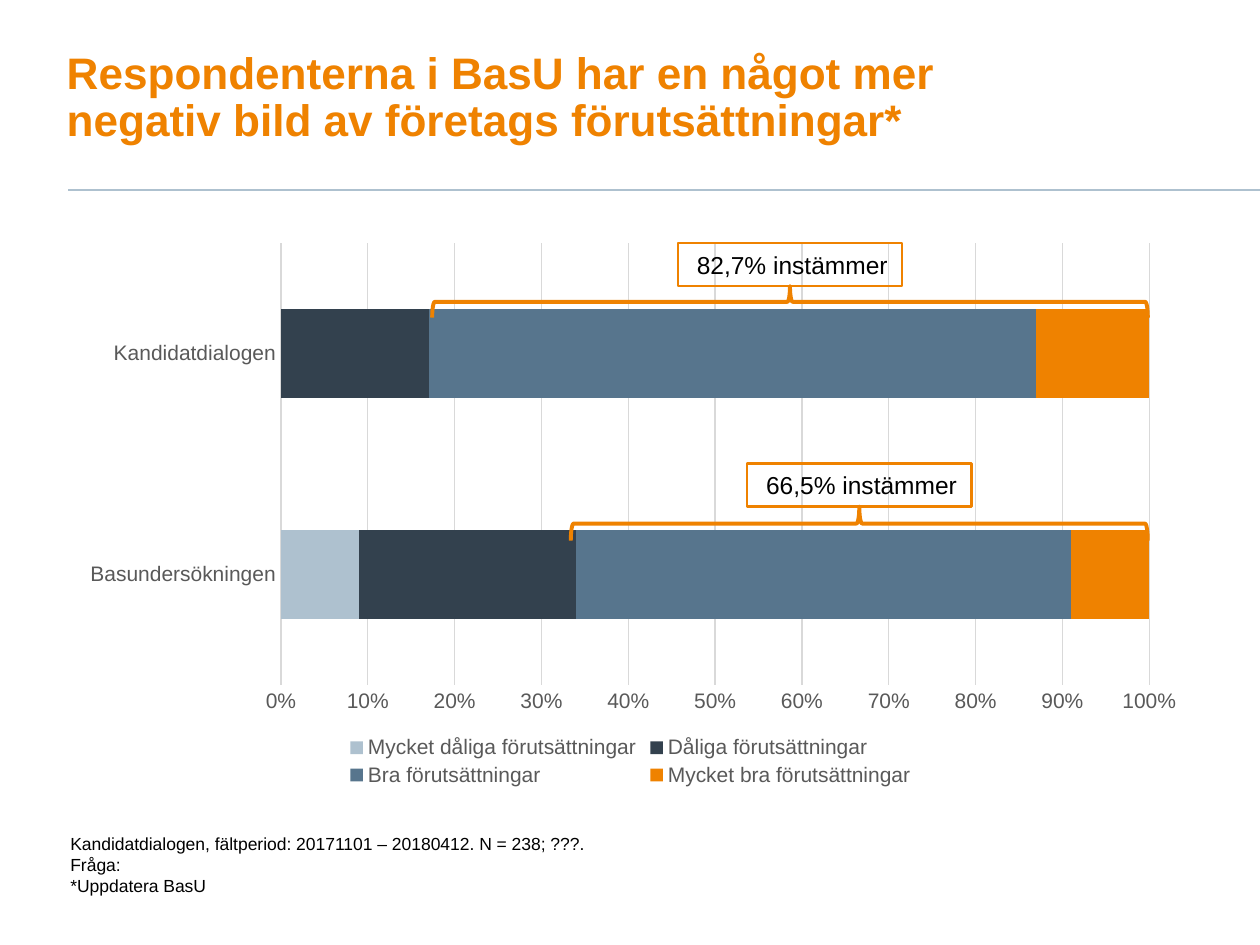
from typing import NamedTuple

from lxml.etree import SubElement
from pptx import Presentation
from pptx.chart.data import CategoryChartData
from pptx.dml.color import RGBColor
from pptx.enum.chart import XL_CHART_TYPE as ChartType
from pptx.enum.chart import XL_LEGEND_POSITION as LegendPosition
from pptx.enum.chart import XL_TICK_MARK as TickMark
from pptx.enum.shapes import MSO_CONNECTOR as Connector
from pptx.enum.shapes import MSO_SHAPE as Shape
from pptx.enum.text import MSO_ANCHOR as Anchor
from pptx.enum.text import PP_ALIGN as Align
from pptx.oxml import parse_xml
from pptx.oxml.ns import nsdecls, qn
from pptx.util import Inches, Pt

FONT = "Arial"
COLORS = {
    "orange": "EF8200",
    "pale": "AEC1CF",
    "dark": "33414E",
    "blue": "57758D",
    "grid": "D9D9D9",
    "axis": "595959",
    "text": "000000",
}


class Answer(NamedTuple):
    name: str
    shares: tuple[int, int]
    color: str


class Agreement(NamedTuple):
    label: str
    start: float
    label_top: float
    depth: float


ANSWERS = [
    Answer("Mycket dåliga förutsättningar", (9, 0), "pale"),
    Answer("Dåliga förutsättningar", (25, 17), "dark"),
    Answer("Bra förutsättningar", (57, 70), "blue"),
    Answer("Mycket bra förutsättningar", (9, 13), "orange"),
]
AGREEMENTS = [
    Agreement("82,7% instämmer", 3.43, 1.93, 0.25),
    Agreement("66,5% instämmer", 4.53, 3.68, 0.27),
]
BRACE_END = 9.11
LABEL_WIDTH, LABEL_HEIGHT = 1.78, 0.34
PLOT_AREA = {"x": 0.19, "y": 0.02, "w": 0.77, "h": 0.79}


def rgb(color: str) -> RGBColor:
    return RGBColor.from_string(COLORS[color])


def set_font(font, size: float, color: str, bold: bool = False) -> None:
    font.name, font.size, font.bold = FONT, Pt(size), bold
    font.color.rgb = rgb(color)


def set_line(line, color: str, width: float) -> None:
    line.color.rgb = rgb(color)
    line.width = Pt(width)


def add_text(slide, left: float, top: float, width: float, height: float,
             lines: list[str], size: float, color: str, bold: bool = False):
    frame = slide.shapes.add_textbox(
        Inches(left), Inches(top), Inches(width), Inches(height)).text_frame
    frame.word_wrap = True
    frame.text = "\n".join(lines)
    for paragraph in frame.paragraphs:
        set_font(paragraph.font, size, color, bold)
    return frame


def add_heading(slide) -> None:
    heading = add_text(
        slide, 0.53, 0.31, 7.16, 0.9,
        ["Respondenterna i BasU har en något mer negativ bild av "
         "företags förutsättningar*"], 25.2, "orange", bold=True)
    heading.margin_left = heading.margin_top = 0
    heading.vertical_anchor = Anchor.BOTTOM
    heading.paragraphs[0].line_spacing = 0.9

    rule = slide.shapes.add_connector(
        Connector.STRAIGHT, Inches(0.54), Inches(1.51), Inches(10), Inches(1.51))
    set_line(rule.line, "pale", 1)
    SubElement(rule._element.spPr, qn("a:effectLst"))


def fix_plot_area(chart) -> None:
    """Pin the inner plot area, so that the braces meet the bars."""
    plot_area = chart._chartSpace.chart.plotArea
    for automatic in plot_area.findall(qn("c:layout")):
        plot_area.remove(automatic)
    sizes = "".join(f'<c:{side} val="{part}"/>' for side, part in PLOT_AREA.items())
    plot_area.insert(0, parse_xml(
        f'<c:layout {nsdecls("c")}><c:manualLayout><c:layoutTarget val="inner"/>'
        f'<c:xMode val="edge"/><c:yMode val="edge"/>{sizes}'
        '</c:manualLayout></c:layout>'))


def add_answer_chart(slide) -> None:
    answers = CategoryChartData()
    answers.categories = ["Basundersökningen", "Kandidatdialogen"]
    for answer in ANSWERS:
        answers.add_series(answer.name, answer.shares)
    chart = slide.shapes.add_chart(
        ChartType.BAR_STACKED_100, Inches(0.53), Inches(1.84),
        Inches(8.95), Inches(4.44), answers).chart
    chart.has_title = False
    set_font(chart.font, 10, "text")

    plot = chart.plots[0]
    plot.gap_width, plot.overlap = 150, 100
    plot.vary_by_categories = False
    for series, answer in zip(plot.series, ANSWERS):
        series.format.fill.solid()
        series.format.fill.fore_color.rgb = rgb(answer.color)

    for axis in (chart.category_axis, chart.value_axis):
        axis.major_tick_mark = axis.minor_tick_mark = TickMark.NONE
        set_font(axis.tick_labels.font, 12, "axis")
    set_line(chart.category_axis.format.line, "grid", 0.75)
    share_axis = chart.value_axis
    share_axis.minimum_scale, share_axis.maximum_scale = 0, 1
    share_axis.major_unit = 0.1
    share_axis.format.line.fill.background()
    set_line(share_axis.major_gridlines.format.line, "grid", 0.75)
    share_axis.tick_labels.number_format = "0%"
    share_axis.tick_labels.number_format_is_linked = False

    chart.has_legend = True
    chart.legend.position = LegendPosition.BOTTOM
    chart.legend.include_in_layout = False
    set_font(chart.legend.font, 12, "axis")
    fix_plot_area(chart)


def add_agreement(slide, agreement: Agreement) -> None:
    """Draw a brace over the agreeing answers, with its label above the tip."""
    group = slide.shapes.add_group_shape()
    middle = (agreement.start + BRACE_END) / 2
    span = BRACE_END - agreement.start
    center = agreement.label_top + LABEL_HEIGHT + agreement.depth / 2

    brace = group.shapes.add_shape(
        Shape.RIGHT_BRACE, Inches(middle - agreement.depth / 2),
        Inches(center - span / 2), Inches(agreement.depth), Inches(span))
    brace.rotation = 270
    set_line(brace.line, "orange", 2.25)

    label = group.shapes.add_shape(
        Shape.RECTANGLE, Inches(middle - LABEL_WIDTH / 2),
        Inches(agreement.label_top), Inches(LABEL_WIDTH), Inches(LABEL_HEIGHT))
    set_line(label.line, "orange", 1.5)
    frame = label.text_frame
    frame.word_wrap = True
    frame.margin_left, frame.margin_right = Inches(0.15), Inches(0.05)
    frame.text = agreement.label
    frame.paragraphs[0].alignment = Align.LEFT
    set_font(frame.paragraphs[0].font, 14, "text")

    for part in (brace, label):
        part.fill.background()
        part.shadow.inherit = False


def main() -> None:
    deck = Presentation()
    deck.slide_width, deck.slide_height = Inches(10), Inches(7.5)
    slide = deck.slides.add_slide(deck.slide_layouts[6])
    add_heading(slide)
    add_answer_chart(slide)
    add_text(slide, 0.46, 6.56, 7.98, 0.61, [
        "Kandidatdialogen, fältperiod: 20171101 – 20180412. N = 238; ???.",
        "Fråga:",
        "*Uppdatera BasU",
    ], 10, "text")
    for agreement in AGREEMENTS:
        add_agreement(slide, agreement)
    deck.save("out.pptx")


if __name__ == "__main__":
    main()
